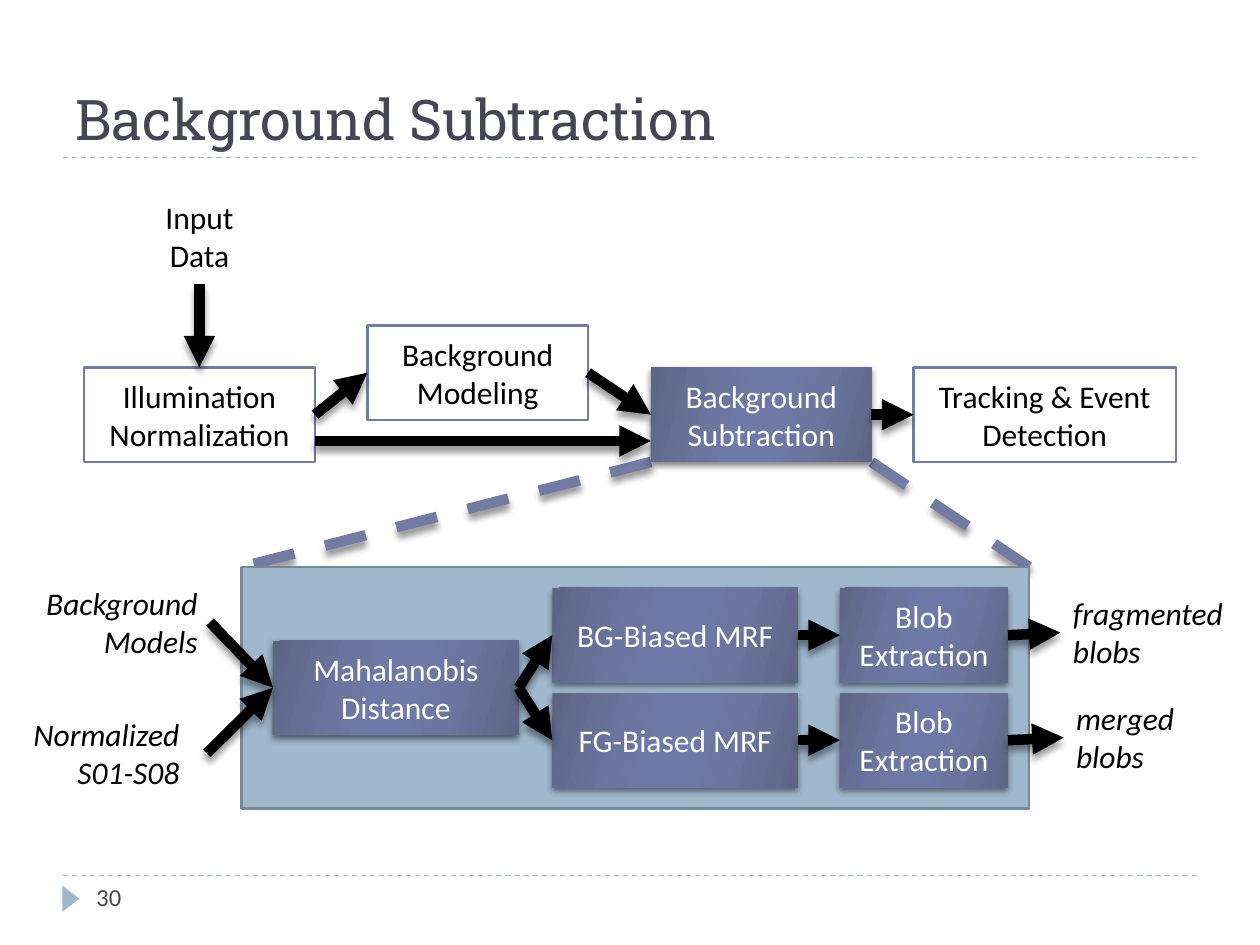
from lxml.etree import SubElement
from pptx import Presentation
from pptx.dml.color import RGBColor as RGB
from pptx.enum.dml import MSO_LINE
from pptx.enum.shapes import MSO_CONNECTOR, MSO_SHAPE as SHAPE
from pptx.enum.text import MSO_ANCHOR as ANCHOR, PP_ALIGN as ALIGN
from pptx.oxml.ns import qn
from pptx.util import Inches, Pt

BLACK, WHITE = RGB(0, 0, 0), RGB(255, 255, 255)
INK = RGB(0x46, 0x46, 0x53)
VIOLET = RGB(0x72, 0x7C, 0xA3)
SKY = RGB(0x9F, 0xB8, 0xCD)
EDGE = RGB(0x76, 0x88, 0x98)
SHEEN = [(0, "5D6585"), (30, "6B759E"), (45, "6E79A7"),
         (55, "6E79A7"), (73, "6B759E"), (100, "5D6585")]

UNIT = 1 / 12  # the diagram sits on a grid of twelfths of an inch
HIGH = 9       # rows per box
TOP, BOTTOM, LEFT, RIGHT = 0, 2, 1, 3

# name: text, column, row, columns wide
PLAIN = {
    "track": ("Tracking & Event Detection", 87, 35, 25),
    "model": ("Background\nModeling", 35, 31, 21),
    "light": ("Illumination\nNormalization", 8, 35, 22),
}
GLOSSY = {
    "subtract": ("Background Subtraction", 62, 35, 21),
    "bg": ("BG-Biased MRF", 52.6, 56, 23.4),
    "fg": ("FG-Biased MRF", 52.6, 66, 23.4),
    "blob1": ("Blob Extraction", 80, 56, 16),
    "blob2": ("Blob Extraction", 80, 66, 16),
    "dist": ("Mahalanobis Distance", 26, 61, 23.4),
}
# name: text, column, row, columns wide, alignment of each paragraph
NOTES = {
    "pieces": ("fragmented blobs", 101, 56, 20, [ALIGN.LEFT]),
    "merged": ("merged blobs", 101.3, 66, 13.8, [ALIGN.LEFT]),
    "models": ("Background Models", 0, 55, 20, [ALIGN.RIGHT]),
    "frames": ("Normalized\nS01-S08", 2, 67.5, 17.7, [ALIGN.LEFT, ALIGN.RIGHT]),
}
NOTE_HIGH = 8.5
ARROWS = [
    ("input", BOTTOM, "light", TOP), ("light", RIGHT, "model", LEFT),
    ("model", RIGHT, "subtract", LEFT), ("subtract", RIGHT, "track", LEFT),
    ("models", RIGHT, "dist", LEFT), ("frames", RIGHT, "dist", LEFT),
    ("dist", RIGHT, "bg", LEFT), ("dist", RIGHT, "fg", LEFT),
    ("bg", RIGHT, "blob1", LEFT), ("fg", RIGHT, "blob2", LEFT),
    ("blob1", RIGHT, "pieces", LEFT), ("blob2", RIGHT, "merged", LEFT),
]
BYPASS = (30, 42, 62, 42)
PANEL = (23, 54, 75, 23)
ZOOM = [(62, 44, 23, 54), (83, 44, 98, 54)]
RULES = [(6, 83.4, 114, 83.4), (6, 15, 114, 15)]

deck = Presentation()
deck.slide_width, deck.slide_height = Inches(10), Inches(7.5)
slide = deck.slides.add_slide(deck.slide_layouts[6])
shapes = slide.shapes


def grid(*cells):
    return [Inches(cell * UNIT) for cell in cells]


def cast(effects, alpha, away):
    """Add a soft shadow that falls straight down."""
    shade = SubElement(effects, qn("a:outerShdw"), blurRad=str(Pt(4)),
                       dist=str(Pt(away)), dir="5400000", rotWithShape="0")
    tint = SubElement(shade, qn("a:srgbClr"), val="000000")
    SubElement(tint, qn("a:alpha"), val=str(alpha * 1000))


def write(shape, text, color=BLACK, size=18, font="Calibri",
          aligns=(ALIGN.CENTER,), anchor=ANCHOR.MIDDLE, italic=False):
    frame = shape.text_frame
    frame.word_wrap = "\n" not in text
    frame.vertical_anchor = anchor
    frame.text = text
    for i, par in enumerate(frame.paragraphs):
        par.alignment = aligns[min(i, len(aligns) - 1)]
        par.font.name, par.font.size = font, Pt(size)
        par.font.color.rgb, par.font.italic = color, italic
    return shape


def label(text, area, **style):
    return write(shapes.add_textbox(*grid(*area)), text, **style)


def block(area, fill=None, edge=None, kind=SHAPE.RECTANGLE):
    shape = shapes.add_shape(kind, *grid(*area))
    shape.shadow.inherit = False
    if fill is not None:
        shape.fill.solid()
        shape.fill.fore_color.rgb = fill
    if edge is None:
        shape.line.fill.background()
    else:
        shape.line.color.rgb, shape.line.width = edge, Pt(1.5)
    return shape


def gloss(shape):
    """Fill with the violet sheen and cast a shadow."""
    shape.fill.gradient()
    shape.fill.gradient_angle = 344
    props = shape._element.spPr
    stops = props.find(qn("a:gradFill")).find(qn("a:gsLst"))
    for old in list(stops):
        stops.remove(old)
    for spot, shade in SHEEN:
        stop = SubElement(stops, qn("a:gs"), pos=str(spot * 1000))
        SubElement(stop, qn("a:srgbClr"), val=shade)
    cast(props.find(qn("a:effectLst")), 50, 2)


def link(ends=(0, 0, 0, 0), color=BLACK, width=6, dash=False):
    """Draw a line: dashed ones are bare, solid ones are arrows."""
    line = shapes.add_connector(MSO_CONNECTOR.STRAIGHT, *grid(*ends))
    line.line.color.rgb, line.line.width = color, Pt(width)
    props = line._element.spPr
    if dash:
        line.line.dash_style = MSO_LINE.DASH
    else:
        SubElement(props.find(qn("a:ln")), qn("a:tailEnd"), type="triangle")
    effects = SubElement(props, qn("a:effectLst"))
    if width > 1:
        cast(effects, 40, 3.4)
    return line


for ends in RULES:
    link(ends, SKY, 0.75, dash=True)
marker = block((5.5, 84.8, 2.5, 1.6), SKY, kind=SHAPE.ISOSCELES_TRIANGLE)
marker.rotation = 90
label("Background Subtraction", (6, 2, 108, 13), color=INK, size=32,
      font="Roboto Slab", aligns=[ALIGN.LEFT], anchor=ANCHOR.BOTTOM)
label("30", (8, 83.4, 26, 4.8), color=INK, size=14,
      aligns=[ALIGN.LEFT], anchor=ANCHOR.TOP)

for ends in ZOOM:
    link(ends, VIOLET, dash=True)
block(PANEL, SKY, EDGE)

parts = {"input": label("Input Data", (12, 18, 14, HIGH))}
for name, (text, *area) in PLAIN.items():
    parts[name] = write(block((*area, HIGH), WHITE, VIOLET), text)
for name, (text, *area) in GLOSSY.items():
    parts[name] = write(block((*area, HIGH)), text, WHITE)
    gloss(parts[name])
for name, (text, *area, aligns) in NOTES.items():
    parts[name] = label(text, (*area, NOTE_HIGH), aligns=aligns,
                        anchor=ANCHOR.TOP, italic=True)

link(BYPASS)
for start, out, end, into in ARROWS:
    arrow = link()
    arrow.begin_connect(parts[start], out)
    arrow.end_connect(parts[end], into)

deck.save("out.pptx")
